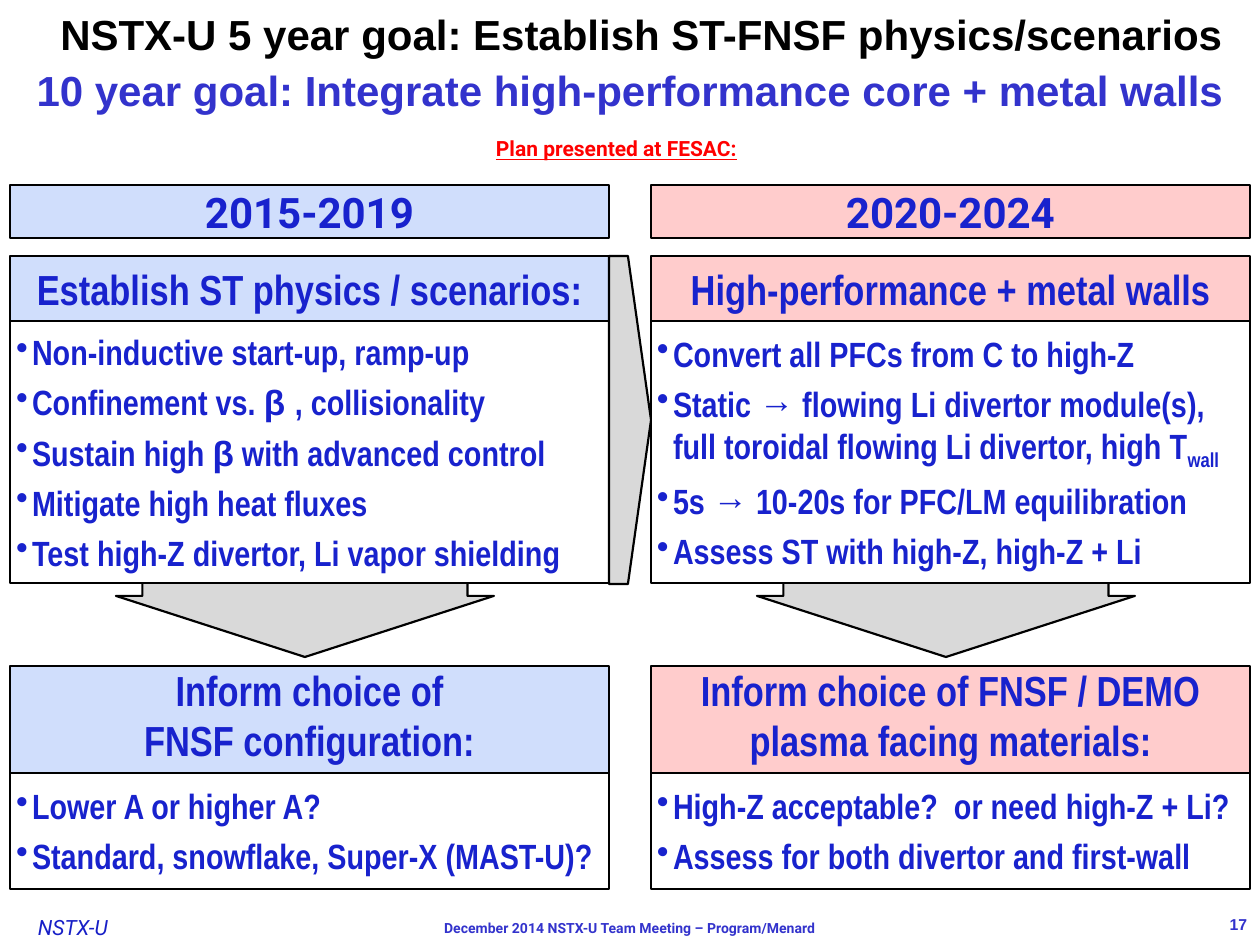
import pptx
import pptx.util
from pptx.dml.color import RGBColor
from pptx.enum.shapes import MSO_SHAPE
from pptx.enum.text import MSO_ANCHOR, PP_ALIGN
from lxml import etree

SCALE = 914400 / 126
BLACK = RGBColor(0x00, 0x00, 0x00)
WHITE = RGBColor(0xFF, 0xFF, 0xFF)
RED = RGBColor(0xFF, 0x00, 0x00)
GRAY = RGBColor(0xD9, 0xD9, 0xD9)
SKY = RGBColor(0xD0, 0xDE, 0xFC)
PINK = RGBColor(0xFF, 0xCC, 0xCC)
BLUE = RGBColor(0x18, 0x22, 0xCD)
NAVY = RGBColor(0x17, 0x1F, 0xC7)
INDIGO = RGBColor(0x33, 0x33, 0xCC)

LEFT, CENTER, RIGHT = PP_ALIGN.LEFT, PP_ALIGN.CENTER, PP_ALIGN.RIGHT
TOP, MIDDLE = MSO_ANCHOR.TOP, MSO_ANCHOR.MIDDLE
NARROW = "Arial Narrow"


def px(count):
    return pptx.util.Emu(round(count * SCALE))


class Deck:
    """Holds the shared style and the current slide."""

    def __init__(self):
        self.show = pptx.Presentation()
        self.show.slide_width, self.show.slide_height = px(1260), px(945)
        self.slide = self.show.slides.add_slide(self.show.slide_layouts[6])

    def frame(self, shape, pad, anchor, wrap=True):
        frame = shape.text_frame
        frame.word_wrap = wrap
        frame.vertical_anchor = anchor
        (frame.margin_left, frame.margin_top,
         frame.margin_right, frame.margin_bottom) = map(px, pad)
        return frame

    def font(self, font, name, size, color, bold=True):
        font.name, font.size, font.bold = name, pptx.util.Pt(size), bold
        font.color.rgb = color

    def label(self, spot, text, name, size, color, align=CENTER, anchor=TOP,
              pad=(13, 6, 13, 6), wrap=True, bold=True):
        box = self.slide.shapes.add_textbox(*map(px, spot))
        frame = self.frame(box, pad, anchor, wrap)
        frame.text = text
        para = frame.paragraphs[0]
        para.alignment = align
        run = para.runs[0]
        self.font(run.font, name, size, color, bold)
        return run.font

    def shape(self, kind, spot, fill, width, *adjust):
        shape = self.slide.shapes.add_shape(kind, *map(px, spot))
        shape.shadow.inherit = False
        shape.fill.solid()
        shape.fill.fore_color.rgb = fill
        shape.line.color.rgb = BLACK
        shape.line.width = pptx.util.Pt(width)
        for spot, value in enumerate(adjust):
            shape.adjustments[spot] = value
        return shape

    def plate(self, spot, fill):
        return self.shape(MSO_SHAPE.PENTAGON, spot, fill, 1.5, 0)

    def arrow(self, spot, shaft, head, turn=0):
        arrow = self.shape(MSO_SHAPE.DOWN_ARROW, spot, GRAY, 1.25, shaft, head)
        arrow.rotation = turn

    def head(self, spot, fill, lines, name=NARROW):
        frame = self.frame(self.plate(spot, fill), (0, 0, 0, 0), MIDDLE)
        frame.text = "\n".join(lines)
        for row, para in enumerate(frame.paragraphs):
            para.alignment = CENTER
            if len(lines) > 1:
                para.line_spacing = 0.8
            if row:
                para.space_before = pptx.util.Pt(5.5)
            self.font(para.runs[0].font, name, 24, BLUE)

    def bullets(self, spot, items):
        """Each item is a tuple of runs; a leading _ marks a subscript."""
        frame = self.frame(self.plate(spot, WHITE), (6, 0, 0, 0), MIDDLE)
        for row, item in enumerate(items):
            para = frame.add_paragraph() if row else frame.paragraphs[0]
            para.alignment = LEFT
            if row:
                para.space_before = pptx.util.Pt(4.6)
            props = para._p.get_or_add_pPr()
            props.set("marL", str(px(16)))
            props.set("indent", str(px(-16)))
            mark = etree.SubElement(props, pptx.oxml.ns.qn("a:buChar"))
            mark.set("char", "•")
            for part in item:
                run = para.add_run()
                run.text = part.removeprefix("_")
                name = "Arial" if part.startswith("β") else NARROW
                self.font(run.font, name, 20, BLUE)
                if part.startswith("_"):
                    run._r.get_or_add_rPr().set("baseline", "-25000")

    def column(self, left, fill, years, topic, goals, choice, asks):
        wide = 599
        self.head((left, 185, wide, 53), fill, [years], "Roboto")
        self.arrow((left + 106, 563, 378, 94), 0.86, 0.65)
        self.bullets((left, 321, wide, 262), goals)
        self.head((left, 256, wide, 65), fill, [topic])
        self.bullets((left, 773, wide, 116), asks)
        self.head((left, 666, wide, 107), fill, choice)


def main():
    deck = Deck()

    # Titles
    deck.label((0, 5, 1260, 58), "NSTX-U 5 year goal: Establish ST-FNSF physics/scenarios",
               "Arial", 24, BLACK, anchor=MIDDLE, pad=(36, 6, 13, 6))
    deck.label((0, 63, 1260, 53), "10 year goal: Integrate high-performance core + metal walls",
               "Arial", 24, INDIGO, anchor=MIDDLE)
    note = deck.label((483, 130, 287, 38), "Plan presented at FESAC:",
                      "Roboto", 12, RED, align=LEFT, wrap=False)
    note.underline = True

    # First five years
    deck.column(
        10, SKY, "2015-2019", "Establish ST physics / scenarios:",
        [("Non-inductive start-up, ramp-up",),
         ("Confinement vs. ", "β ", ", collisionality"),
         ("Sustain high ", "β", " with advanced control"),
         ("Mitigate high heat fluxes",),
         ("Test high-Z divertor, Li vapor shielding",)],
        ["Inform choice of", "FNSF configuration:"],
        [("Lower A or higher A?",),
         ("Standard, snowflake, Super-X (MAST-U)?",)])

    # Arrow from the first period to the second
    deck.arrow((466, 399, 328, 42), 1, 0.55, 270)

    # Next five years
    deck.column(
        651, PINK, "2020-2024", "High-performance + metal walls",
        [("Convert all PFCs from C to high-Z",),
         ("Static → flowing Li divertor module(s), "
          "full toroidal flowing Li divertor, high T", "_wall"),
         ("5s → 10-20s for PFC/LM equilibration",),
         ("Assess ST with high-Z, high-Z + Li",)],
        ["Inform choice of FNSF / DEMO", "plasma facing materials:"],
        [("High-Z acceptable?  or need high-Z + Li?",),
         ("Assess for both divertor and first-wall",)])

    # Footer
    mark = deck.label((38, 915, 110, 25), "NSTX-U", "Roboto", 12, NAVY,
                      align=LEFT, pad=(0, 0, 0, 0), bold=False)
    mark.italic = True
    deck.label((252, 914, 756, 30), "December 2014 NSTX-U Team Meeting – Program/Menard",
               "Roboto", 8, INDIGO)
    deck.label((1155, 914, 105, 21), "17", "Arial", 9, INDIGO,
               align=RIGHT, anchor=MIDDLE)

    deck.show.save("out.pptx")


if __name__ == "__main__":
    main()
